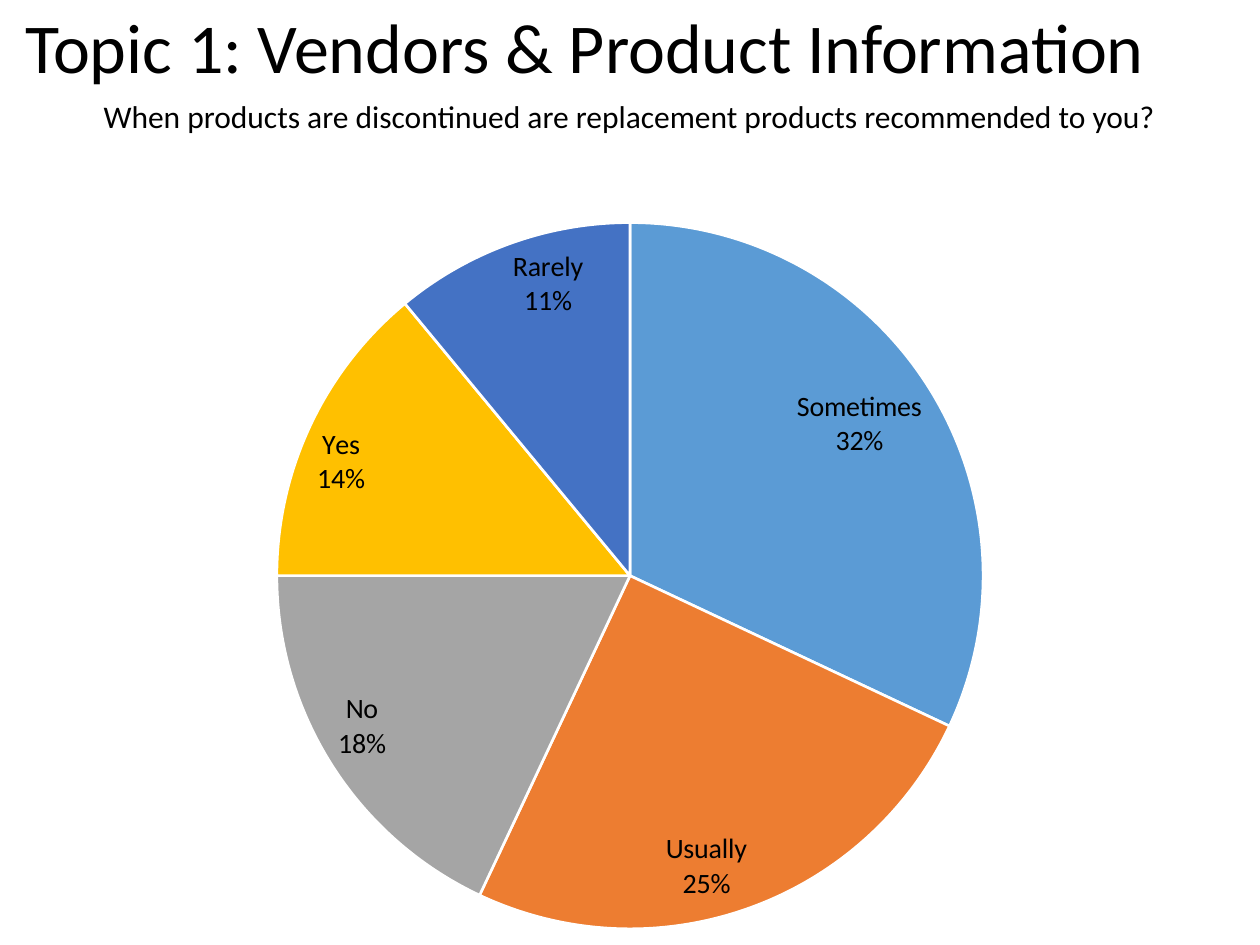
from dataclasses import dataclass

from lxml import etree
from pptx import Presentation
from pptx.chart.data import CategoryChartData
from pptx.dml.color import RGBColor
from pptx.enum.chart import XL_CHART_TYPE, XL_LABEL_POSITION
from pptx.enum.text import MSO_ANCHOR, MSO_AUTO_SIZE, PP_ALIGN
from pptx.oxml.ns import qn
from pptx.util import Inches, Pt

LEFT, CENTER = PP_ALIGN.LEFT, PP_ALIGN.CENTER
TOP, MIDDLE = MSO_ANCHOR.TOP, MSO_ANCHOR.MIDDLE
NO_FIT = MSO_AUTO_SIZE.NONE
PIE = XL_CHART_TYPE.PIE
INSIDE_END = XL_LABEL_POSITION.INSIDE_END
TITLE_ONLY = 5


@dataclass(frozen=True)
class Theme:
    """Colours, font and type sizes of the deck."""
    font: str = "Calibri"
    text: str = "000000"
    divider: str = "FFFFFF"
    slices: tuple = ("5B9BD5", "ED7D31", "A5A5A5", "FFC000", "4472C4", "70AD47")
    title_size: int = 40
    question_size: int = 18
    label_size: int = 16
    chart_size: int = 10


THEME = Theme()
ANSWERS = {"Sometimes": 32, "Usually": 25, "No": 18, "Yes": 14, "Rarely": 11, "(blank)": None}


def style_font(font, size):
    """Apply the theme font at the given size."""
    font.name = THEME.font
    font.size = Pt(size)
    font.bold = False
    font.color.rgb = RGBColor.from_string(THEME.text)


def write_text(shape, text, *, size, align=LEFT, anchor=TOP, spacing=1.0):
    """Write one formatted paragraph into a shape."""
    frame = shape.text_frame
    frame.word_wrap = True
    frame.auto_size = NO_FIT
    frame.vertical_anchor = anchor
    para = frame.paragraphs[0]
    para.alignment = align
    para.line_spacing = spacing
    span = para.add_run()
    span.text = text
    style_font(span.font, size)


def add_title(page, box, text):
    """Move the title placeholder into the box and fill it."""
    title = page.shapes.title
    title.left, title.top, title.width, title.height = box
    write_text(title, text, size=THEME.title_size, anchor=MIDDLE, spacing=0.9)


def add_question(page, box, text):
    """Place the centred survey question in the box."""
    write_text(page.shapes.add_textbox(*box), text, size=THEME.question_size, align=CENTER)


def set_plot_area(chart, x, y, w, h):
    """Fix the inner plot area as fractions of the chart."""
    plot_area = chart._chartSpace.chart.plotArea
    for old in plot_area.findall(qn("c:layout")):
        plot_area.remove(old)
    layout = etree.Element(qn("c:layout"))
    manual = etree.SubElement(layout, qn("c:manualLayout"))
    settings = {"layoutTarget": "inner", "xMode": "edge", "yMode": "edge",
                "x": x, "y": y, "w": w, "h": h}
    for name, value in settings.items():
        etree.SubElement(manual, qn(f"c:{name}")).set("val", str(value))
    plot_area.insert(0, layout)


def add_answer_pie(page, box, answers):
    """Place the pie of answer shares in the box."""
    data = CategoryChartData()
    data.categories = list(answers)
    data.add_series("Series 1", list(answers.values()))
    chart = page.shapes.add_chart(PIE, *box, data).chart
    chart.has_title = False
    chart.has_legend = False
    style_font(chart.font, THEME.chart_size)
    set_plot_area(chart, 0.11, 0.1, 0.78, 0.88)

    plot = chart.plots[0]
    plot.vary_by_categories = True
    for index, color in enumerate(THEME.slices):
        piece = plot.series[0].points[index].format
        piece.fill.solid()
        piece.fill.fore_color.rgb = RGBColor.from_string(color)
        piece.line.color.rgb = RGBColor.from_string(THEME.divider)
        piece.line.width = Pt(1.5)

    plot.has_data_labels = True
    labels = plot.data_labels
    labels.show_category_name = True
    labels.show_percentage = True
    labels.show_value = False
    labels.number_format = "0%"
    labels.number_format_is_linked = False
    labels.position = INSIDE_END
    style_font(labels.font, THEME.label_size)
    separator = etree.Element(qn("c:separator"))
    separator.text = "\n"
    labels._element.find(qn("c:showBubbleSize")).addnext(separator)


def main():
    """Build the survey slide and save the deck."""
    deck = Presentation()
    deck.slide_width, deck.slide_height = Inches(10), Inches(7.5)
    page = deck.slides.add_slide(deck.slide_layouts[TITLE_ONLY])
    left, width = Inches(0.1), Inches(9.79)
    add_title(page, (left, 0, width, Inches(0.81)),
              "Topic 1: Vendors & Product Information")
    add_question(page, (left, Inches(0.72), width, Inches(0.4)),
                 "When products are discontinued are replacement products recommended to you?")
    add_answer_pie(page, (Inches(1.4), Inches(1.13), Inches(7.2), Inches(6.37)), ANSWERS)
    deck.save("out.pptx")


if __name__ == "__main__":
    main()
